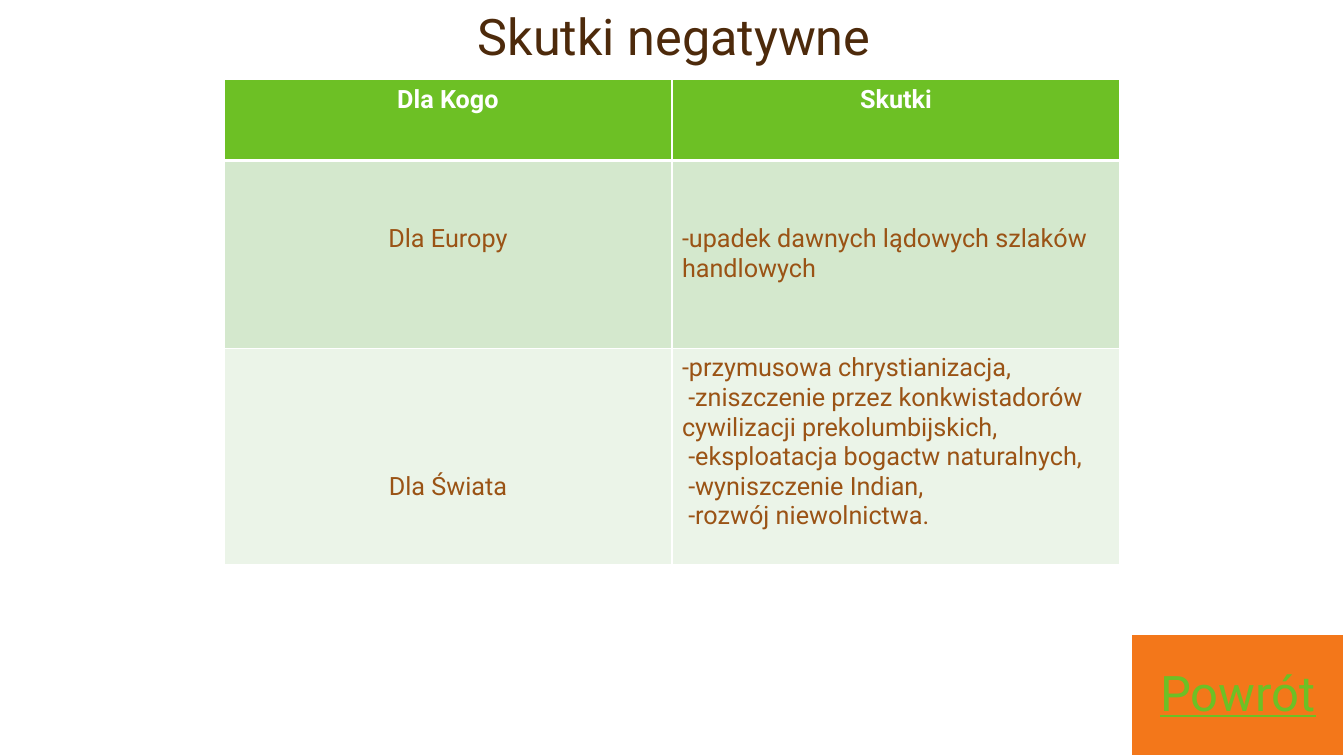
from dataclasses import dataclass

from lxml.etree import SubElement
from pptx import Presentation
from pptx.dml.color import RGBColor
from pptx.enum.shapes import MSO_SHAPE as Shape
from pptx.enum.text import MSO_ANCHOR as Anchor, PP_ALIGN as Align
from pptx.oxml.ns import qn
from pptx.util import Pt


@dataclass(frozen=True)
class Theme:
    font: str = "Roboto"
    title: str = "4D2A0B"
    text: str = "9A5315"
    white: str = "FFFFFF"
    green: str = "6DC025"
    band_dark: str = "D4E8CD"
    band_light: str = "EBF4E8"
    orange: str = "F3771A"
    title_size: float = 36
    table_size: float = 18
    button_size: float = 35


@dataclass(frozen=True)
class Box:
    left: float
    top: float
    width: float
    height: float

    def lengths(self):
        return [Pt(v) for v in (self.left, self.top, self.width, self.height)]


THEME = Theme()
LINE_HEIGHT = 21.1
CELL_MARGIN = 3.6
ITEM_INDENT = 4.45


def apply_format(target, values):
    for name, value in values.items():
        setattr(target, name, value)


def write_paragraph(paragraph, text, size, color, align, indent=0, spacing=None, **font):
    if indent:
        properties = paragraph._p.get_or_add_pPr()
        properties.set("marL", "0")
        properties.set("indent", str(int(Pt(indent))))
    apply_format(paragraph, {"alignment": align, "line_spacing": spacing})
    run = paragraph.add_run()
    run.text = text
    apply_format(run.font, {"name": THEME.font, "size": Pt(size), **font})
    run.font.color.rgb = RGBColor.from_string(color)


def add_title(slide, box, text):
    frame = slide.shapes.add_textbox(*box.lengths()).text_frame
    apply_format(frame, {"word_wrap": True, "vertical_anchor": Anchor.BOTTOM})
    write_paragraph(frame.paragraphs[0], text, THEME.title_size, THEME.title,
                    Align.CENTER, spacing=0.9)


def set_borders(cell, widths):
    properties = cell._tc.get_or_add_tcPr()
    for position, (side, width) in enumerate(widths.items()):
        line = SubElement(properties, qn(f"a:ln{side}"), w=str(int(Pt(width))))
        fill = SubElement(line, qn("a:solidFill"))
        SubElement(fill, qn("a:srgbClr"), val=THEME.white)
        properties.insert(position, line)


def fill_cell(cell, lines, fill, color, align, skipped_lines=0, bold=False):
    cell.fill.solid()
    cell.fill.fore_color.rgb = RGBColor.from_string(fill)
    cell.margin_top = Pt(CELL_MARGIN + skipped_lines * LINE_HEIGHT)
    frame = cell.text_frame
    for index, text in enumerate(lines):
        paragraph = frame.add_paragraph() if index else frame.paragraphs[0]
        write_paragraph(paragraph, text, THEME.table_size, color, align,
                        indent=ITEM_INDENT if index else 0, bold=bold)


def add_effects_table(slide, box, headings, rows, heights):
    table = slide.shapes.add_table(len(heights), len(headings), *box.lengths()).table
    apply_format(table, {"first_row": False, "horz_banding": False})
    for column in table.columns:
        column.width = Pt(box.width / len(headings))
    for row, height in zip(table.rows, heights):
        row.height = Pt(height)
    for column, heading in enumerate(headings):
        fill_cell(table.cell(0, column), [heading], THEME.green, THEME.white,
                  Align.CENTER, bold=True)
    bands = (THEME.band_dark, THEME.band_light)
    for index, (cells, band) in enumerate(zip(rows, bands), 1):
        for column, (lines, skipped) in enumerate(cells):
            align = Align.LEFT if column else Align.CENTER
            fill_cell(table.cell(index, column), lines, band, THEME.text, align, skipped)
    for index in range(len(heights)):
        widths = {"L": 1, "R": 1, "T": 3 if index == 1 else 1, "B": 1 if index else 3}
        for column in range(len(headings)):
            set_borders(table.cell(index, column), widths)


def add_return_button(slide, box, text):
    button = slide.shapes.add_shape(Shape.RECTANGLE, *box.lengths())
    button.shadow.inherit = False
    button.fill.solid()
    button.fill.fore_color.rgb = RGBColor.from_string(THEME.orange)
    button.line.color.rgb = RGBColor.from_string(THEME.white)
    button.line.width = Pt(1)
    frame = button.text_frame
    margins = {f"margin_{side}": Pt(10.8) for side in ("left", "top", "right", "bottom")}
    apply_format(frame, {"word_wrap": True, "vertical_anchor": Anchor.MIDDLE, **margins})
    write_paragraph(frame.paragraphs[0], text, THEME.button_size, THEME.green,
                    Align.CENTER, spacing=0.9, underline=True)


def main():
    presentation = Presentation()
    apply_format(presentation, {"slide_width": Pt(960), "slide_height": Pt(540)})
    slide = presentation.slides.add_slide(presentation.slide_layouts[6])
    heights = (57.6, 134.4, 154.6)
    rows = (
        ((["Dla Europy"], 2),
         (["-upadek dawnych lądowych szlaków handlowych"], 2)),
        ((["Dla Świata"], 4),
         (["-przymusowa chrystianizacja,",
           "-zniszczenie przez konkwistadorów cywilizacji prekolumbijskich,",
           "-eksploatacja bogactw naturalnych,",
           "-wyniszczenie Indian,",
           "-rozwój niewolnictwa."], 0)),
    )
    add_title(slide, Box(85.7, 0, 792, 51), "Skutki negatywne")
    add_effects_table(slide, Box(160, 57, 640, sum(heights)),
                      ("Dla Kogo", "Skutki"), rows, heights)
    add_return_button(slide, Box(808.4, 453.2, 151.6, 86.8), "Powrót")
    presentation.save("out.pptx")


if __name__ == "__main__":
    main()
